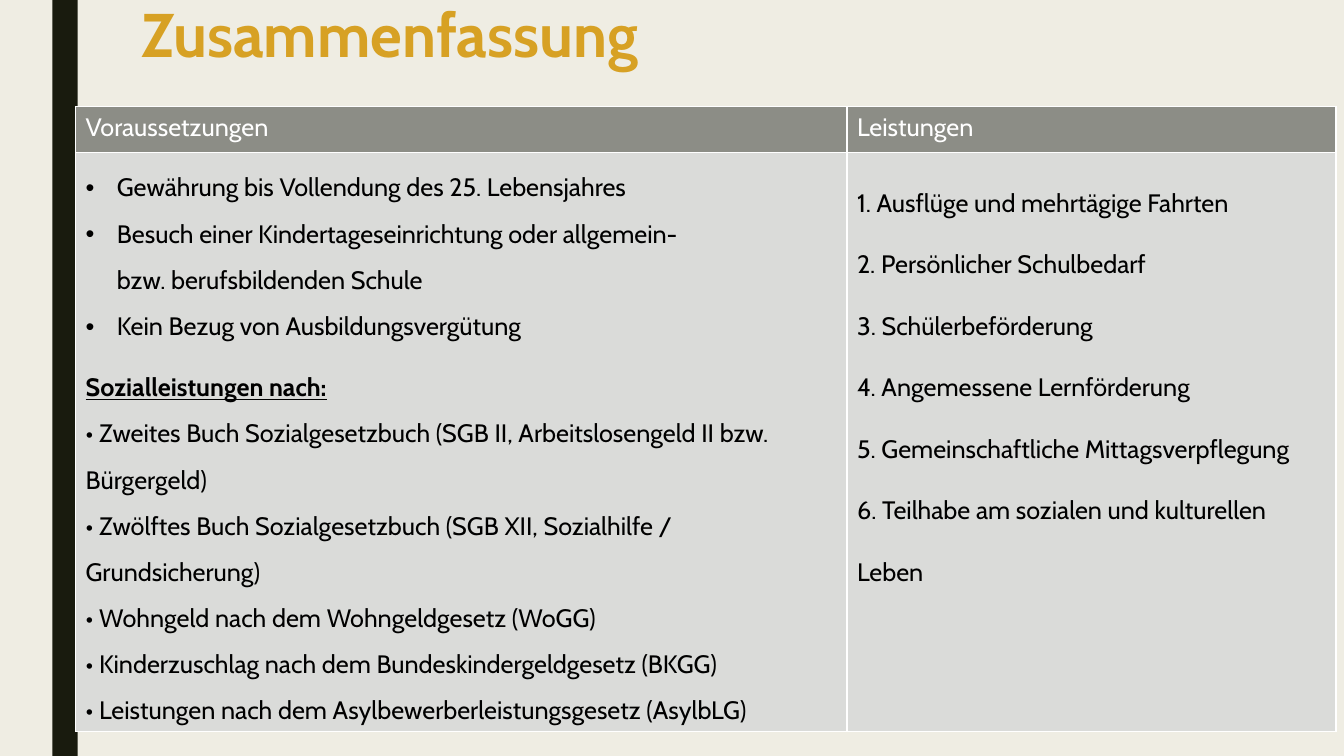
from lxml import etree
from pptx import Presentation
from pptx.dml.color import RGBColor
from pptx.enum.shapes import MSO_SHAPE
from pptx.enum.text import MSO_ANCHOR, PP_ALIGN
from pptx.oxml.ns import qn
from pptx.util import Inches, Pt

RECTANGLE = MSO_SHAPE.RECTANGLE
TOP, LEFT = MSO_ANCHOR.TOP, PP_ALIGN.LEFT

CREAM = RGBColor(0xEF, 0xED, 0xE3)
DARK = RGBColor(0x19, 0x1B, 0x0E)
GOLD = RGBColor(0xD7, 0xA1, 0x24)
HEADER_GREY = RGBColor(0x8C, 0x8D, 0x86)
BODY_GREY = RGBColor(0xDA, 0xDB, 0xD9)
WHITE = RGBColor(0xFF, 0xFF, 0xFF)
BLACK = RGBColor(0, 0, 0)

# Content
TITLE = "Zusammenfassung"
HEADERS = ["Voraussetzungen", "Leistungen"]
REQUIREMENTS = [
    "Gewährung bis Vollendung des 25. Lebensjahres",
    "Besuch einer Kindertageseinrichtung oder allgemein-\vbzw. berufsbildenden Schule",
    "Kein Bezug von Ausbildungsvergütung",
]
BENEFITS_HEADING = "Sozialleistungen nach:"
BENEFITS = [
    "• Zweites Buch Sozialgesetzbuch (SGB II, Arbeitslosengeld II bzw. Bürgergeld)",
    "• Zwölftes Buch Sozialgesetzbuch (SGB XII, Sozialhilfe / Grundsicherung)",
    "• Wohngeld nach dem Wohngeldgesetz (WoGG)",
    "• Kinderzuschlag nach dem Bundeskindergeldgesetz (BKGG)",
    "• Leistungen nach dem Asylbewerberleistungsgesetz (AsylbLG)",
]
SERVICES = [
    "1. Ausflüge und mehrtägige Fahrten",
    "2. Persönlicher Schulbedarf",
    "3. Schülerbeförderung",
    "4. Angemessene Lernförderung",
    "5. Gemeinschaftliche Mittagsverpflegung",
    "6. Teilhabe am sozialen und kulturellen Leben",
]

# Layout and formats
COLUMN_WIDTHS = [7.65, 4.85]
ROW_HEIGHTS = [0.45, 5.74]
BULLET_INDENT = Inches(0.31)
TITLE_FONT = {"name": "Cabin", "size": Pt(44), "bold": True}
TABLE_FONT = {"name": "Cabin", "size": Pt(18), "bold": False}
HEADING_FONT = {**TABLE_FONT, "bold": True, "underline": True}
WIDE = {"line_spacing": 1.5}
DOUBLE = {"line_spacing": 2.0}
AFTER_GAP = {"line_spacing": 1.0, "space_before": Pt(22)}


def apply(target, values):
    for name, value in values.items():
        setattr(target, name, value)


def style_font(font, values, color):
    apply(font, values)
    font.color.rgb = color


def add_bullet(paragraph):
    properties = paragraph._p.get_or_add_pPr()
    properties.set("marL", str(BULLET_INDENT))
    properties.set("indent", str(-BULLET_INDENT))
    etree.SubElement(properties, qn("a:buFont")).set("typeface", "Arial")
    etree.SubElement(properties, qn("a:buChar")).set("char", "•")


def write_cell(cell, lines, color):
    """Write lines of (text, font values, paragraph values, bulleted)."""
    frame = cell.text_frame
    for index, (text, font_values, spacing, bulleted) in enumerate(lines):
        paragraph = frame.add_paragraph() if index else frame.paragraphs[0]
        paragraph.text = text
        apply(paragraph, spacing)
        for run in paragraph.runs:
            style_font(run.font, font_values, color)
        if bulleted:
            add_bullet(paragraph)


def paint_cell(cell, color):
    cell.fill.solid()
    cell.fill.fore_color.rgb = color
    properties = cell._tc.get_or_add_tcPr()
    for index, side in enumerate(("lnL", "lnR", "lnT", "lnB")):
        line = etree.Element(qn(f"a:{side}"), w=str(Pt(1)))
        fill = etree.SubElement(line, qn("a:solidFill"))
        etree.SubElement(fill, qn("a:srgbClr")).set("val", str(WHITE))
        properties.insert(index, line)


def main():
    presentation = Presentation()
    apply(presentation, {"slide_width": Inches(13.33), "slide_height": Inches(7.5)})
    slide = presentation.slides.add_slide(presentation.slide_layouts[5])
    slide.background.fill.solid()
    slide.background.fill.fore_color.rgb = CREAM

    # Dark side bar
    bar = slide.shapes.add_shape(RECTANGLE, Inches(0.52), 0, Inches(0.25), Inches(7.5))
    bar.shadow.inherit = False
    bar.fill.solid()
    bar.fill.fore_color.rgb = DARK
    bar.line.fill.background()

    # Title
    title = slide.shapes.title
    apply(title, {"left": Inches(1.3), "top": 0,
                  "width": Inches(10.5), "height": Inches(1.62)})
    title.text_frame.text = TITLE
    title.text_frame.vertical_anchor = TOP
    heading = title.text_frame.paragraphs[0]
    apply(heading, {"alignment": LEFT, "line_spacing": 0.89})
    style_font(heading.runs[0].font, TITLE_FONT, GOLD)

    # Table
    table = slide.shapes.add_table(
        len(ROW_HEIGHTS), len(COLUMN_WIDTHS), Inches(0.75), Inches(1.06),
        Inches(sum(COLUMN_WIDTHS)), Inches(sum(ROW_HEIGHTS))).table
    table.horz_banding = False
    for column, width in zip(table.columns, COLUMN_WIDTHS):
        column.width = Inches(width)
    for row, height in zip(table.rows, ROW_HEIGHTS):
        row.height = Inches(height)

    conditions = [(text, TABLE_FONT, WIDE, True) for text in REQUIREMENTS]
    conditions.append((BENEFITS_HEADING, HEADING_FONT, AFTER_GAP, False))
    conditions += [(text, TABLE_FONT, WIDE, False) for text in BENEFITS]
    services = [(text, TABLE_FONT, DOUBLE, False) for text in SERVICES]
    headers = [[(text, TABLE_FONT, {}, False)] for text in HEADERS]

    rows = [(headers, HEADER_GREY, WHITE), ([conditions, services], BODY_GREY, BLACK)]
    for row, (contents, fill_color, text_color) in zip(table.rows, rows):
        for cell, lines in zip(row.cells, contents):
            write_cell(cell, lines, text_color)
            paint_cell(cell, fill_color)

    presentation.save("out.pptx")


if __name__ == "__main__":
    main()
